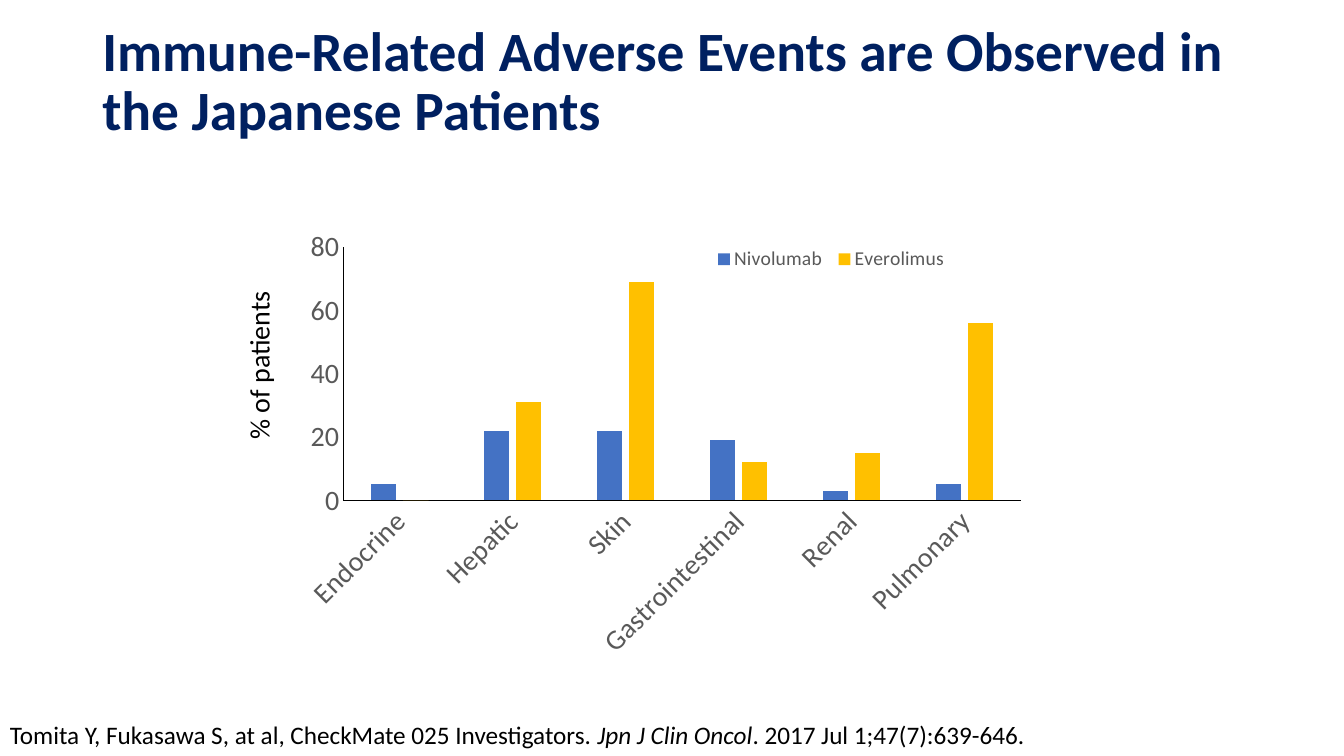
from lxml import etree
from pptx import Presentation
from pptx import util as u
from pptx.chart.data import CategoryChartData
from pptx.dml.color import RGBColor
from pptx.enum import chart as ch, text
from pptx.oxml import ns

Pt = u.Pt
FONT = "Calibri"
COLORS = {"title": "002060", "ink": "000000", "axis": "595959", "paper": "FFFFFF",
          "Nivolumab": "4472C4", "Everolimus": "FFC000"}
ORGANS = ["Endocrine", "Hepatic", "Skin", "Gastrointestinal", "Renal", "Pulmonary"]
RATES = {"Nivolumab": [5, 22, 22, 19, 3, 5], "Everolimus": [0, 31, 69, 12, 15, 56]}


def color(key):
    return RGBColor.from_string(COLORS[key])


def style(font, size, key):
    font.name, font.size = FONT, Pt(size)
    font.color.rgb = color(key)


def text_region(slide, box, runs, size, key="ink", wrap=True):
    """Place one paragraph of (words, italic) runs in the box."""
    region = slide.shapes.add_textbox(*map(Pt, box))
    frame = region.text_frame
    frame.word_wrap = wrap
    for words, italic in runs:
        run = frame.paragraphs[0].add_run()
        run.text = words
        run.font.italic = italic
        style(run.font, size, key)
    return region


def headline(slide, box):
    region = text_region(
        slide, box,
        [("Immune-Related Adverse Events are Observed in the Japanese Patients", False)],
        39.6, "title")
    paragraph = region.text_frame.paragraphs[0]
    paragraph.line_spacing = 0.9
    paragraph.runs[0].font.bold = True


def set_layout(part, inner, **fractions):
    """Fix a chart part at fractions of the chart frame."""
    for old in part.findall(ns.qn("c:layout")):
        part.remove(old)
    layout = etree.Element(ns.qn("c:layout"))
    manual = etree.SubElement(layout, ns.qn("c:manualLayout"))
    settings = {"layoutTarget": "inner"} if inner else {}
    settings.update(xMode="edge", yMode="edge", **fractions)
    for tag, value in settings.items():
        etree.SubElement(manual, ns.qn("c:" + tag)).set("val", str(value))
    if inner:
        part.insert(0, layout)
    else:
        part.find(ns.qn("c:legendPos")).addnext(layout)


def event_chart(slide, box):
    data = CategoryChartData()
    data.categories = ORGANS
    for drug, rates in RATES.items():
        data.add_series(drug, rates)
    chart = slide.shapes.add_chart(ch.XL_CHART_TYPE.COLUMN_CLUSTERED,
                                   *map(Pt, box), data).chart
    style(chart.font, 10, "ink")
    chart.has_title = False

    # Columns
    plot = chart.plots[0]
    plot.gap_width, plot.overlap = 219, -27
    plot.vary_by_categories = False
    for series in plot.series:
        series.format.fill.solid()
        series.format.fill.fore_color.rgb = color(series.name)
    set_layout(chart._chartSpace.chart.plotArea, True, x=0.07, y=0.05, w=0.91, h=0.52)

    # Axes
    for axis in (chart.category_axis, chart.value_axis):
        axis.has_major_gridlines = False
        axis.major_tick_mark = axis.minor_tick_mark = ch.XL_TICK_MARK.NONE
        axis.format.line.color.rgb = color("ink")
        axis.format.line.width = Pt(0.75)
        style(axis.tick_labels.font, 20, "axis")
    organ_text = chart.category_axis._element.find(ns.qn("c:txPr"))
    organ_text.find(ns.qn("a:bodyPr")).set("rot", str(-45 * 60000))
    rate_axis = chart.value_axis
    rate_axis.minimum_scale, rate_axis.maximum_scale = 0, 80
    rate_axis.major_unit = 20

    # Legend
    chart.has_legend = True
    legend = chart.legend
    legend.position = ch.XL_LEGEND_POSITION.BOTTOM
    legend.include_in_layout = False
    style(legend.font, 14, "axis")
    set_layout(legend._element, False, x=0.56, y=0.04, w=0.33, h=0.07)


def rate_label(slide, box):
    label = text_region(slide, box, [("% of patients", False)], 20, wrap=False)
    label.text_frame.paragraphs[0].alignment = text.PP_ALIGN.CENTER
    label.fill.solid()
    label.fill.fore_color.rgb = color("paper")
    label.rotation = 270


def citation(slide, box):
    text_region(slide, box, [
        ("Tomita Y, Fukasawa S, at al, CheckMate 025 Investigators. ", False),
        ("Jpn J Clin Oncol", True),
        (". 2017 Jul 1;47(7):639-646.", False)], 18)


def main():
    deck = Presentation()
    deck.slide_width, deck.slide_height = Pt(960), Pt(540)
    slide = deck.slides.add_slide(deck.slide_layouts[6])
    headline(slide, (66, 13, 828, 120))
    event_chart(slide, (208, 159, 532, 348))
    citation(slide, (0, 510.5, 747, 29))
    rate_label(slide, (124, 245, 122, 32))
    deck.save("out.pptx")


if __name__ == "__main__":
    main()
